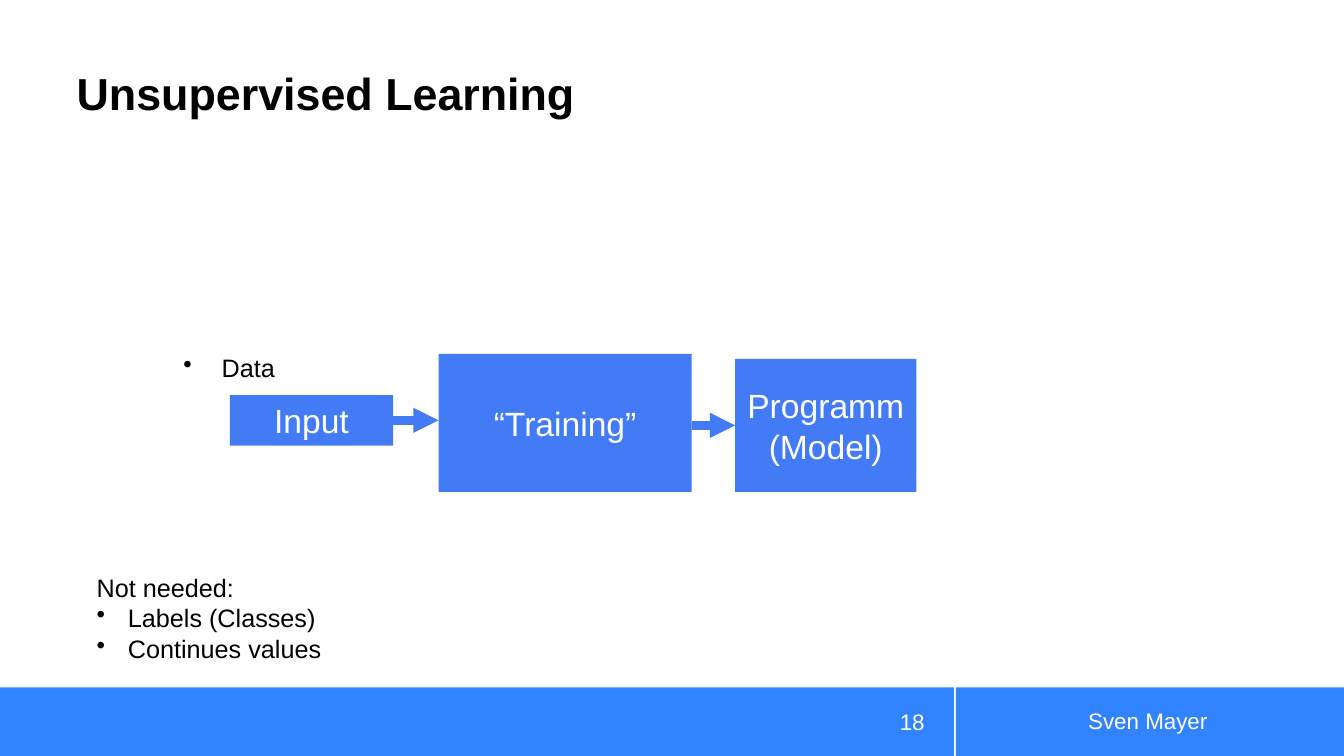
from dataclasses import dataclass

from lxml.etree import SubElement
from pptx import Presentation
from pptx.dml.color import RGBColor
from pptx.enum.shapes import MSO_CONNECTOR, MSO_SHAPE
from pptx.enum.text import MSO_ANCHOR, MSO_AUTO_SIZE, PP_ALIGN
from pptx.oxml.ns import qn
from pptx.shapes.autoshape import Shape
from pptx.slide import Slide
from pptx.util import Inches, Pt

SLIDE_WIDTH = Inches(13.33)
SLIDE_HEIGHT = Inches(7.5)
FONT = "Arial"
WHITE = RGBColor(0xFF, 0xFF, 0xFF)
BLACK = RGBColor(0x00, 0x00, 0x00)
FOOTER_BLUE = RGBColor(0x31, 0x83, 0xFF)
BOX_BLUE = RGBColor(0x42, 0x7B, 0xF5)


@dataclass(frozen=True)
class Area:
    """A rectangle in percent of the slide's width and height."""
    left: float
    top: float
    width: float
    height: float

    @property
    def right(self) -> float:
        return self.left + self.width

    @property
    def middle(self) -> float:
        return self.top + self.height / 2

    def lengths(self) -> tuple[int, int, int, int]:
        return (across(self.left), down(self.top),
                across(self.width), down(self.height))


@dataclass(frozen=True)
class Line:
    text: str
    indent: float = 0  # inches; an indented line gets a bullet


@dataclass(frozen=True)
class Label:
    area: Area
    lines: tuple[Line, ...]
    size: int
    color: RGBColor
    alignment: PP_ALIGN = PP_ALIGN.LEFT
    anchor: MSO_ANCHOR = MSO_ANCHOR.MIDDLE
    wrap: bool = True


TITLE_AREA = Area(5.7, 1.73, 65.27, 14.13)
FOOTER_BARS = (Area(0, 90.93, 70.97, 9.07), Area(71.12, 90.93, 28.88, 9.07))
INPUT = Area(17.1, 52.27, 12.15, 6.67)
TRAINING = Area(32.63, 46.8, 18.83, 18.27)
MODEL = Area(54.69, 47.47, 13.5, 17.6)

STAGES = tuple(
    Label(area, (Line(text),), 24, WHITE, PP_ALIGN.CENTER)
    for area, text in ((INPUT, "Input"), (TRAINING, "“Training”"),
                       (MODEL, "Programm (Model)"))
)
LABELS = (
    Label(Area(72.09, 92.67, 26.63, 5.33), (Line("Sven Mayer"),),
          16, WHITE, PP_ALIGN.CENTER),
    Label(Area(63.09, 92.8, 6.45, 5.33), (Line("18"),),
          16, WHITE, PP_ALIGN.RIGHT),
    Label(Area(12.9, 46, 8.33, 5.33), (Line("Data", 0.38),),
          18, BLACK, anchor=MSO_ANCHOR.TOP, wrap=False),
    Label(Area(6.45, 75.07, 18.38, 13.47),
          (Line("Not needed:"), Line("Labels (Classes)", 0.31),
           Line("Continues values", 0.31)),
          18, BLACK, anchor=MSO_ANCHOR.TOP, wrap=False),
)


def across(percent: float) -> int:
    return round(SLIDE_WIDTH * percent / 100)


def down(percent: float) -> int:
    return round(SLIDE_HEIGHT * percent / 100)


def add_box(slide: Slide, area: Area, color: RGBColor) -> Shape:
    box = slide.shapes.add_shape(MSO_SHAPE.RECTANGLE, *area.lengths())
    box.shadow.inherit = False
    box.fill.solid()
    box.fill.fore_color.rgb = color
    box.line.fill.background()
    return box


def write_label(shape: Shape, label: Label) -> None:
    frame = shape.text_frame
    frame.word_wrap = label.wrap
    frame.auto_size = MSO_AUTO_SIZE.NONE if label.wrap else MSO_AUTO_SIZE.SHAPE_TO_FIT_TEXT
    frame.vertical_anchor = label.anchor
    frame.text = "\n".join(line.text for line in label.lines)
    for paragraph, line in zip(frame.paragraphs, label.lines):
        paragraph.alignment = label.alignment
        paragraph.font.name = FONT
        paragraph.font.size = Pt(label.size)
        paragraph.font.color.rgb = label.color
        if line.indent:
            properties = paragraph._p.get_or_add_pPr()
            properties.set("marL", str(Inches(line.indent)))
            properties.set("indent", str(-Inches(line.indent)))
            bullet = properties.makeelement(qn("a:buChar"), {"char": "•"})
            properties.insert(0, bullet)


def add_arrow(slide: Slide, source: Area, target: Area) -> None:
    """Draw a level arrow at the middle of the lower of the two boxes."""
    level = down(min(source, target, key=lambda area: area.height).middle)
    arrow = slide.shapes.add_connector(
        MSO_CONNECTOR.STRAIGHT, across(source.right), level, across(target.left), level)
    arrow.line.color.rgb = BOX_BLUE
    arrow.line.width = Pt(6)
    SubElement(arrow.line._get_or_add_ln(), qn("a:tailEnd"), type="triangle")
    SubElement(arrow._element.spPr, qn("a:effectLst"))


def set_title(slide: Slide, text: str) -> None:
    title = slide.shapes.title
    title.left, title.top, title.width, title.height = TITLE_AREA.lengths()
    write_label(title, Label(TITLE_AREA, (Line(text),), 32, BLACK,
                             anchor=MSO_ANCHOR.BOTTOM))
    frame = title.text_frame
    frame.margin_left = frame.margin_right = 0
    frame.margin_top = frame.margin_bottom = 0
    frame.paragraphs[0].font.bold = True
    frame.paragraphs[0].line_spacing = 0.9


def main() -> None:
    presentation = Presentation()
    presentation.slide_width = SLIDE_WIDTH
    presentation.slide_height = SLIDE_HEIGHT
    slide = presentation.slides.add_slide(presentation.slide_layouts.get_by_name("Title Only"))
    set_title(slide, "Unsupervised Learning")
    for bar in FOOTER_BARS:
        add_box(slide, bar, FOOTER_BLUE)
    for stage in STAGES:
        write_label(add_box(slide, stage.area, BOX_BLUE), stage)
    for source, target in zip(STAGES, STAGES[1:]):
        add_arrow(slide, source.area, target.area)
    for label in LABELS:
        write_label(slide.shapes.add_textbox(*label.area.lengths()), label)
    presentation.save("out.pptx")


if __name__ == "__main__":
    main()
